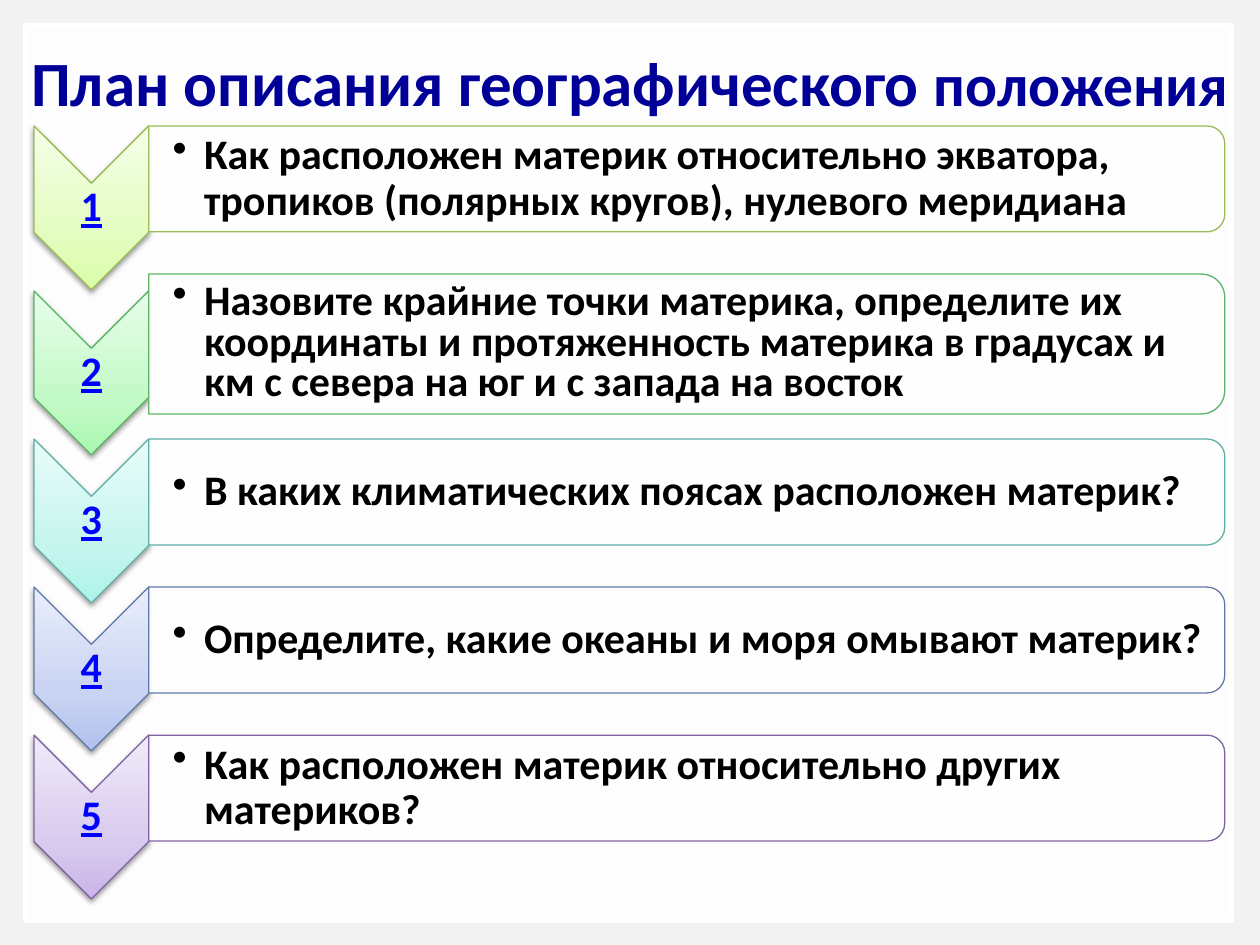
from lxml import etree
from pptx import Presentation
from pptx.dml.color import RGBColor
from pptx.enum.shapes import MSO_SHAPE
from pptx.enum.text import MSO_ANCHOR, PP_ALIGN
from pptx.oxml.ns import qn
from pptx.util import Inches, Pt

RECTANGLE = MSO_SHAPE.RECTANGLE
CHEVRON = MSO_SHAPE.CHEVRON
BAR = MSO_SHAPE.ROUND_2_SAME_RECTANGLE
MIDDLE = MSO_ANCHOR.MIDDLE
CENTER = PP_ALIGN.CENTER

FONT = "Calibri"
COLORS = {"background": "F2F2F2", "panel": "FFFFFF", "title": "000099",
          "number": "0000FF", "text": "000000", "shadow": "000000"}

CHEVRON_WIDTH, CHEVRON_HEIGHT = 0.91, 1.3
BAR_HEIGHT, TALL_BAR_HEIGHT = 0.84, 1.11
ROW_PITCH = 1.175

# Question, bar height, line spacing, outline colour, gradient from bottom to top
QUESTIONS = [
    ("Как расположен материк относительно экватора, тропиков (полярных кругов), "
     "нулевого меридиана",
     BAR_HEIGHT, 0.9, "9BBB59", ("DAFDA7", "E4FCC2", "F5FFE7")),
    ("Назовите крайние точки материка, определите их координаты и протяженность "
     "материка в градусах и км с севера на юг и с запада на восток",
     TALL_BAR_HEIGHT, 0.8, "5CB565", ("AAF8B0", "C4F9C8", "E7FEE9")),
    ("В каких климатических поясах расположен материк?",
     BAR_HEIGHT, 0.9, "5EAFA6", ("AEF3E9", "C6F5EE", "E8FCF9")),
    ("Определите, какие океаны и моря омывают материк?",
     BAR_HEIGHT, 0.9, "6179A8", ("B1C1ED", "C9D3F2", "E9EEFB")),
    ("Как расположен материк относительно других материков?",
     BAR_HEIGHT, 0.9, "8064A2", ("C9B5E8", "D8CBEE", "F0EAF9")),
]
GRADIENT_POSITIONS = (0, 35, 100)


def rgb(value):
    return RGBColor.from_string(value)


def add_color(parent, value, alpha=None):
    color = etree.SubElement(parent, qn("a:srgbClr"), val=value)
    if alpha is not None:
        etree.SubElement(color, qn("a:alpha"), val=str(alpha * 1000))


def fill_translucent(shape, value, alpha):
    shape.fill.solid()
    shape.fill.fore_color.rgb = rgb(value)
    color = shape._element.spPr.find(qn("a:solidFill"))[0]
    etree.SubElement(color, qn("a:alpha"), val=str(alpha * 1000))


def fill_gradient(shape, values):
    """Fill upwards on the slide, whichever way the shape is turned."""
    shape.fill.gradient()
    shape.fill.gradient_angle = 90
    gradient = shape._element.spPr.find(qn("a:gradFill"))
    gradient.set("rotWithShape", "0")
    stops = gradient.find(qn("a:gsLst"))
    for stop in list(stops):
        stops.remove(stop)
    for position, value in zip(GRADIENT_POSITIONS, values):
        add_color(etree.SubElement(stops, qn("a:gs"), pos=str(position * 1000)), value)


def add_shadow(shape):
    effects = shape._element.spPr.find(qn("a:effectLst"))
    shadow = etree.SubElement(effects, qn("a:outerShdw"), blurRad=str(Pt(3.1)),
                              dist=str(Pt(1.6)), dir="5400000", rotWithShape="0")
    add_color(shadow, COLORS["shadow"], 38)


def add_outlined(slide, kind, left, top, width, height, line, weight=0.75):
    shape = slide.shapes.add_shape(kind, Inches(left), Inches(top),
                                   Inches(width), Inches(height))
    shape.shadow.inherit = False
    shape.line.color.rgb = rgb(line)
    shape.line.width = Pt(weight)
    return shape


def add_turned(slide, kind, left, top, width, height, line):
    """Add a shape turned by 90 degrees that covers the given box."""
    shift = (width - height) / 2
    shape = add_outlined(slide, kind, left + shift, top - shift, height, width, line)
    shape.rotation = 90
    return shape


def add_text(slide, left, top, width, height, inset=0.02, left_inset=0.02):
    """Add a middle-anchored text box and return its first paragraph."""
    box = slide.shapes.add_textbox(Inches(left), Inches(top),
                                   Inches(width), Inches(height))
    frame = box.text_frame
    frame.word_wrap = True
    frame.vertical_anchor = MIDDLE
    frame.margin_left = Inches(left_inset)
    frame.margin_top = frame.margin_right = frame.margin_bottom = Inches(inset)
    return frame.paragraphs[0]


def set_font(font, size, color):
    font.name = FONT
    font.size = Pt(size)
    font.bold = True
    font.color.rgb = rgb(color)


def add_bullet(paragraph):
    properties = paragraph._p.get_or_add_pPr()
    properties.set("marL", str(Inches(0.25)))
    properties.set("indent", str(Inches(-0.25)))
    etree.SubElement(properties, qn("a:buChar"), char="•")


def add_panel(slide, left, top, width, height):
    panel = add_outlined(slide, RECTANGLE, left, top, width, height, COLORS["panel"], 2)
    fill_translucent(panel, COLORS["panel"], 85)


def add_title(slide, left, top, width, height):
    paragraph = add_text(slide, left, top, width, height, 0.05, 0.05)
    paragraph.alignment = CENTER
    for text, size in (("План описания географического ", 36), ("положения", 34)):
        run = paragraph.add_run()
        run.text = text
        set_font(run.font, size, COLORS["title"])


def add_number(slide, left, top, number, line, gradient):
    chevron = add_turned(slide, CHEVRON, left, top, CHEVRON_WIDTH, CHEVRON_HEIGHT, line)
    fill_gradient(chevron, gradient)
    add_shadow(chevron)
    notch = CHEVRON_WIDTH / 2
    paragraph = add_text(slide, left, top + notch, CHEVRON_WIDTH,
                         CHEVRON_HEIGHT - 2 * notch)
    paragraph.text = str(number)
    paragraph.alignment = CENTER
    paragraph.line_spacing = 0.9
    set_font(paragraph.font, 24, COLORS["number"])
    paragraph.font.underline = True


def add_question(slide, left, top, width, height, text, spacing, line):
    bar = add_turned(slide, BAR, left, top, width, height, line)
    fill_translucent(bar, COLORS["panel"], 90)
    paragraph = add_text(slide, left, top + 0.04, width - 0.04, height - 0.08,
                         left_inset=0.19)
    paragraph.text = text
    add_bullet(paragraph)
    paragraph.line_spacing = spacing
    set_font(paragraph.font, 24, COLORS["text"])


def add_plan(slide, left, top, width):
    """Stack the numbered questions; a taller bar pushes the next rows down."""
    for number, (text, height, spacing, line, gradient) in enumerate(QUESTIONS, 1):
        extra = (height - BAR_HEIGHT) / 2
        add_number(slide, left, top + extra, number, line, gradient)
        add_question(slide, left + CHEVRON_WIDTH, top, width - CHEVRON_WIDTH, height,
                     text, spacing, line)
        top += ROW_PITCH + extra


def main():
    presentation = Presentation()
    presentation.slide_width = Inches(10)
    presentation.slide_height = Inches(7.5)
    slide = presentation.slides.add_slide(presentation.slide_layouts[6])
    slide.background.fill.solid()
    slide.background.fill.fore_color.rgb = rgb(COLORS["background"])
    add_panel(slide, 0.2, 0.2, 9.58, 7.11)
    add_title(slide, 0, 0.3, 10, 0.69)
    add_plan(slide, 0.27, 1, 9.45)
    presentation.save("out.pptx")


if __name__ == "__main__":
    main()
